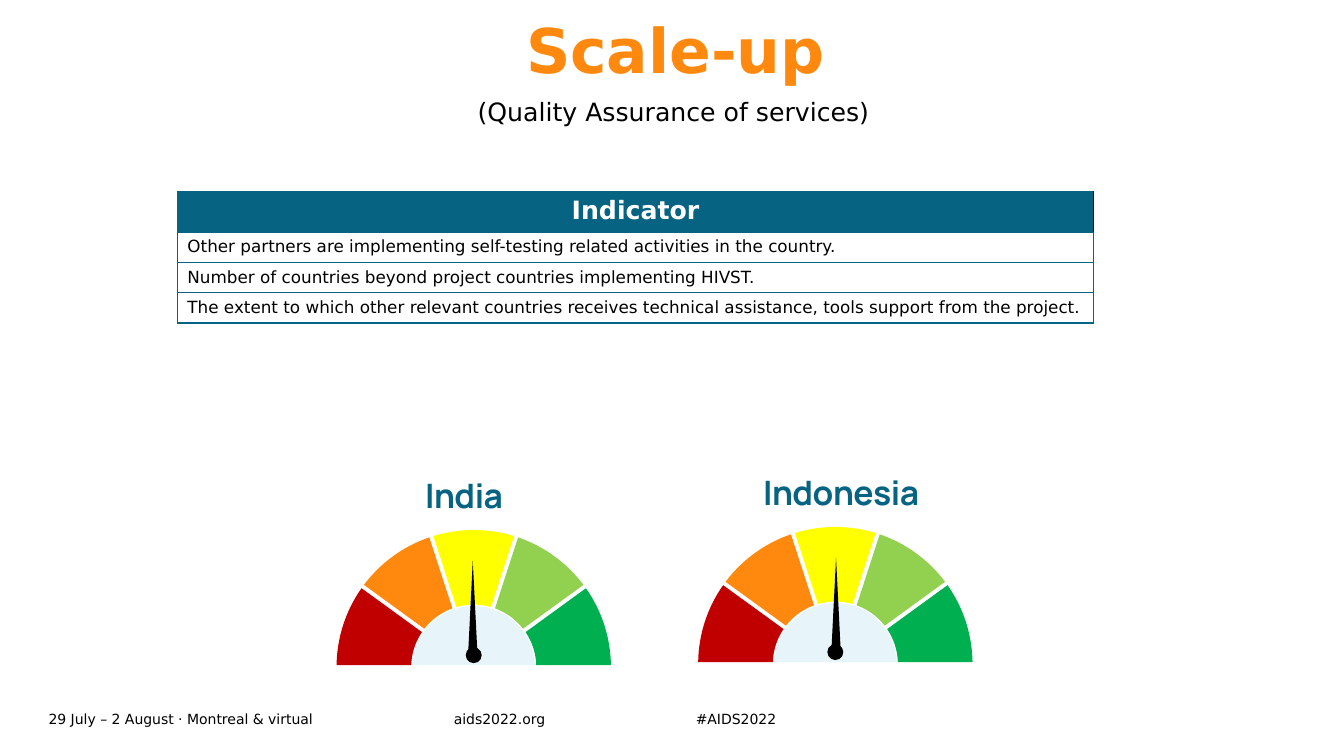
from math import asin, cos, pi, sin, tan

from lxml.etree import SubElement
from pptx import Presentation
from pptx.dml.color import RGBColor
from pptx.enum.shapes import MSO_SHAPE
from pptx.enum.text import MSO_ANCHOR, MSO_AUTO_SIZE, PP_ALIGN
from pptx.oxml import parse_xml
from pptx.oxml.ns import nsdecls, qn
from pptx.util import Pt

COLORS = {
    "black": "000000",
    "white": "FFFFFF",
    "teal": "076382",
    "orange": "FF890E",
    "red": "C00000",
    "yellow": "FFFF00",
    "lime": "92D050",
    "green": "00B050",
    "hub": "E7F5FA",
}
BODY_FONT = "DejaVu Sans"
BANDS = ["red", "orange", "yellow", "lime", "green"]
OUTER_RADIUS = 98
INNER_RADIUS = 44.7
HUB_RADIUS = 43.7
HALF_GAP = 1.5
INDICATORS = [
    "Other partners are implementing self-testing related activities in the country.",
    "Number of countries beyond project countries implementing HIVST.",
    "The extent to which other relevant countries receives technical assistance, "
    "tools support from the project.",
]
ROW_HEIGHTS = [29, 21.3, 21.3, 17.3]
FOOTERS = [
    ("29 July – 2 August · Montreal & virtual", 34.7, 289.4),
    ("aids2022.org", 324.2, 139),
    ("#AIDS2022", 497, 139),
]


def color(name):
    return RGBColor.from_string(COLORS[name])


def write(frame, text, size=12, ink="black", bold=False, font=BODY_FONT,
          align=PP_ALIGN.LEFT, line_spacing=None, tracking=None):
    para = frame.paragraphs[0]
    para.alignment = align
    para.line_spacing = line_spacing
    span = para.add_run()
    span.text = text
    span.font.name = font
    span.font.size = Pt(size)
    span.font.bold = bold
    span.font.color.rgb = color(ink)
    if tracking is not None:
        span._r.get_or_add_rPr().set("spc", str(round(tracking * 100)))


def clear_margins(frame):
    frame.margin_left = frame.margin_right = 0
    frame.margin_top = frame.margin_bottom = 0


def add_title(page, text):
    title = page.shapes.title
    title.left, title.top, title.width, title.height = Pt(375.8), Pt(14.4), Pt(725), Pt(96.5)
    frame = title.text_frame
    clear_margins(frame)
    frame.vertical_anchor = MSO_ANCHOR.TOP
    frame.auto_size = MSO_AUTO_SIZE.NONE
    write(frame, text, size=44, ink="orange", bold=True, line_spacing=0.9)


def add_text(page, text, left, top, width, height, anchor=MSO_ANCHOR.TOP,
             flush=False, **style):
    frame = page.shapes.add_textbox(Pt(left), Pt(top), Pt(width), Pt(height)).text_frame
    frame.word_wrap = True
    frame.vertical_anchor = anchor
    if flush:
        clear_margins(frame)
    else:
        frame.auto_size = MSO_AUTO_SIZE.SHAPE_TO_FIT_TEXT
    write(frame, text, **style)


def set_border(cell, side, ink, width):
    properties = cell._tc.get_or_add_tcPr()
    line = SubElement(properties, qn(f"a:ln{side}"), w=str(Pt(width)))
    fill = SubElement(line, qn("a:solidFill"))
    SubElement(fill, qn("a:srgbClr"), val=COLORS[ink])


def fill_cell(cell, text, background, borders, **style):
    write(cell.text_frame, text, **style)
    for side, (ink, width) in borders.items():
        set_border(cell, side, ink, width)
    cell.fill.solid()
    cell.fill.fore_color.rgb = color(background)


def add_indicator_table(page):
    holder = page.shapes.add_table(
        len(ROW_HEIGHTS), 1, Pt(126.7), Pt(136.8), Pt(654.5), Pt(108))
    table = holder.table
    table.horz_banding = False
    for row, height in zip(table.rows, ROW_HEIGHTS):
        row.height = Pt(height)
    holder.height = Pt(108)
    borders = {side: ("teal", 1) for side in "LRTB"}
    header_borders = borders | {"L": ("teal", 0.5), "R": ("black", 1), "T": ("teal", 0.5)}
    fill_cell(table.cell(0, 0), "Indicator", "teal", header_borders,
              size=18, ink="white", bold=True, align=PP_ALIGN.CENTER)
    for index, text in enumerate(INDICATORS, 1):
        fill_cell(table.cell(index, 0), text, "white", borders)


def paint(shape, fill):
    shape.shadow.inherit = False
    shape.fill.solid()
    shape.fill.fore_color.rgb = color(fill)
    shape.line.fill.background()


def arc(center, radius, start, end):
    inset = asin(HALF_GAP / radius)
    first, last = start - inset, end + inset
    half = (last - first) / 2
    reach = 4 / 3 * tan(half / 4)

    def place(angle, pull=0):
        x = center[0] + radius * (cos(angle) - pull * sin(angle))
        y = center[1] - radius * (sin(angle) + pull * cos(angle))
        return Pt(x), Pt(y)

    points = [place(first)]
    for begin in (first, first + half):
        finish = begin + half
        points += [place(begin, reach), place(finish, -reach), place(finish)]
    return points


def add_outline(group, arcs, fill):
    points = [point for part in arcs for point in part]
    builder = group.shapes.build_freeform(*points[0], scale=1.0)
    builder.add_line_segments(points[1:], close=True)
    shape = builder.convert_to_shape()
    segments = list(shape._element.iter(qn("a:lnTo")))
    for offset in range(0, len(points), 7):
        for first in (offset, offset + 3):
            curve = parse_xml(f"<a:cubicBezTo {nsdecls('a')}/>")
            segments[first].addprevious(curve)
            for segment in segments[first:first + 3]:
                curve.append(segment[0])
                segment.getparent().remove(segment)
    paint(shape, fill)


def add_preset(group, kind, left, top, width, height):
    shape = group.shapes.add_shape(kind, Pt(left), Pt(top), Pt(width), Pt(height))
    paint(shape, "black")


def add_gauge(page, center, needle_shift):
    group = page.shapes.add_group_shape()
    sweep = pi / len(BANDS)
    for index, band in enumerate(BANDS):
        start = pi - index * sweep
        outer = arc(center, OUTER_RADIUS, start, start - sweep)
        inner = arc(center, INNER_RADIUS, start, start - sweep)
        add_outline(group, [outer, inner[::-1]], band)
    add_outline(group, [arc(center, HUB_RADIUS, pi, 0)], "hub")
    x, y = center
    add_preset(group, MSO_SHAPE.ISOSCELES_TRIANGLE, x - 3.3 + needle_shift, y - 76, 6.6, 66)
    add_preset(group, MSO_SHAPE.OVAL, x - 5.7, y - 14.3, 11.4, 11.4)


def add_country(page, name, left, top, center, needle_shift):
    add_text(page, name, left, top, 183, 36, anchor=MSO_ANCHOR.BOTTOM, size=24,
             ink="teal", bold=True, font="Manrope", align=PP_ALIGN.CENTER, tracking=-0.3)
    add_gauge(page, center, needle_shift)


def main():
    deck = Presentation()
    deck.slide_width, deck.slide_height = Pt(960), Pt(540)
    page = deck.slides.add_slide(deck.slide_layouts[5])
    for text, left, width in FOOTERS:
        add_text(page, text, left, 505, width, 17.3,
                 anchor=MSO_ANCHOR.MIDDLE, flush=True, size=10)
    add_title(page, "Scale-up")
    add_text(page, "(Quality Assurance of services)", 334, 65.5, 654.5, 29, size=18)
    add_indicator_table(page)
    add_country(page, "India", 240, 335.3, (338.4, 476.6), -0.7)
    add_country(page, "Indonesia", 509.3, 333.1, (596.7, 474.4), 0.5)
    deck.save("out.pptx")


if __name__ == "__main__":
    main()
